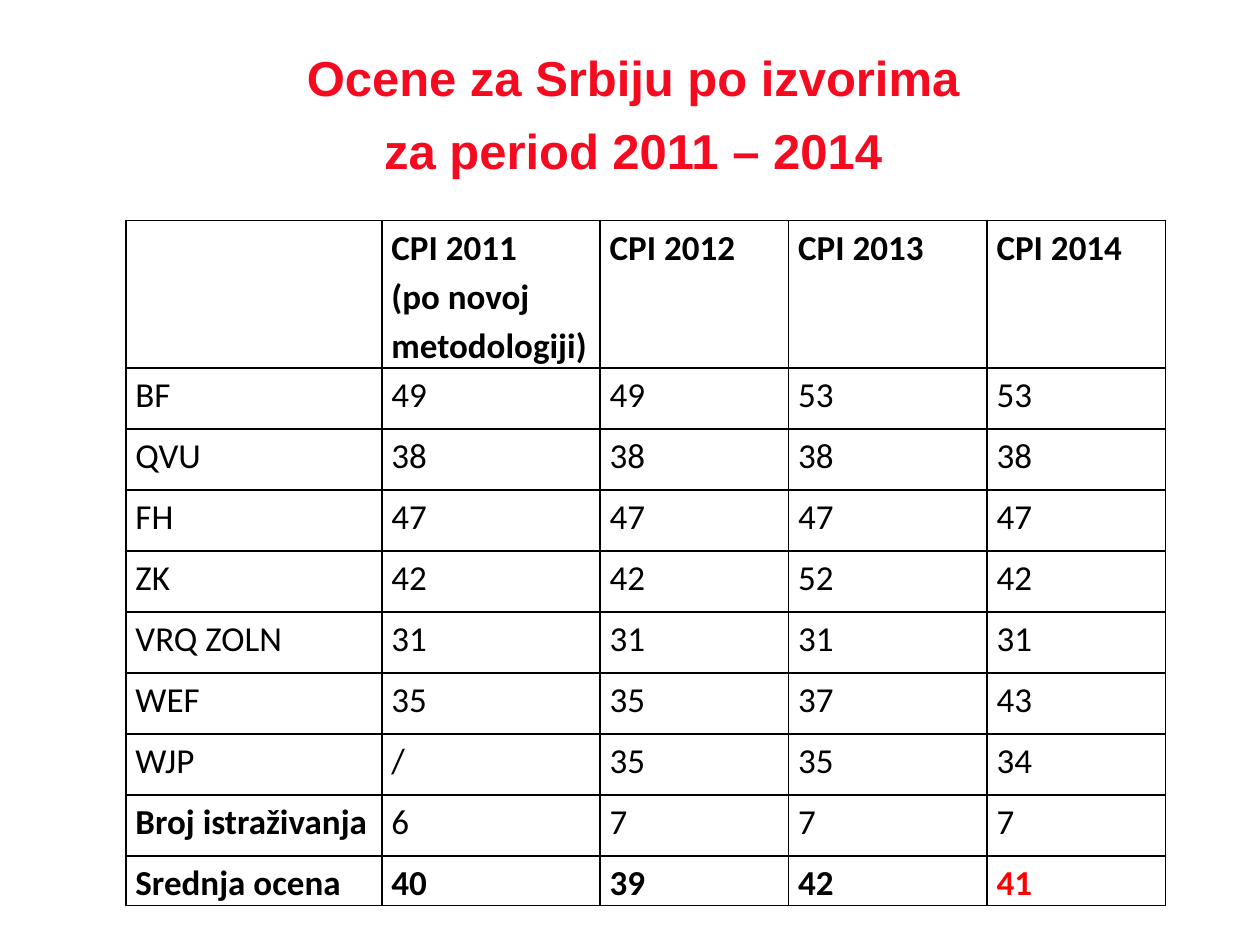
from dataclasses import dataclass

from lxml.etree import SubElement
from pptx import Presentation
from pptx.dml.color import RGBColor
from pptx.enum.text import MSO_ANCHOR as Anchor, MSO_AUTO_SIZE as AutoSize, PP_ALIGN as Align
from pptx.oxml.ns import qn
from pptx.util import Cm, Pt

COLORS = {"title": "F60A20", "text": "000000", "border": "000000", "highlight": "FF0000"}
TITLE_FONT = {"name": "Arial", "size": Pt(28), "bold": True}
CELL_FONT = {"name": "Calibri", "size": Pt(20)}
CELL_FORMAT = {"margin_left": Cm(0.19), "margin_right": Cm(0.19),
               "margin_top": 0, "margin_bottom": 0, "vertical_anchor": Anchor.TOP}
TABLE_FLAGS = {"first_row": False, "horz_banding": False}

COLUMN_WIDTHS = [5.16, 4.4, 3.8, 4.0, 3.6]
ROW_HEIGHT, LAST_ROW_HEIGHT = 1.23, 0.99


@dataclass
class ScoreRow:
    label: str
    scores: list[str]
    bold_label: bool = False
    bold_scores: bool = False


ROWS = [
    ScoreRow("", ["CPI 2011\n(po novoj metodologiji)", "CPI 2012", "CPI 2013", "CPI 2014"],
             bold_scores=True),
    ScoreRow("BF", ["49", "49", "53", "53"]),
    ScoreRow("QVU", ["38", "38", "38", "38"]),
    ScoreRow("FH", ["47", "47", "47", "47"]),
    ScoreRow("ZK", ["42", "42", "52", "42"]),
    ScoreRow("VRQ ZOLN", ["31", "31", "31", "31"]),
    ScoreRow("WEF", ["35", "35", "37", "43"]),
    ScoreRow("WJP", ["/", "35", "35", "34"]),
    ScoreRow("Broj istraživanja", ["6", "7", "7", "7"], bold_label=True),
    ScoreRow("Srednja ocena", ["40", "39", "42", "41"], bold_label=True, bold_scores=True),
]


def apply_format(target, values: dict) -> None:
    for attribute, value in values.items():
        setattr(target, attribute, value)


def add_borders(cell) -> None:
    properties = cell._tc.get_or_add_tcPr()
    for side in ("a:lnL", "a:lnR", "a:lnT", "a:lnB"):
        line = SubElement(properties, qn(side), w=str(Pt(1)))
        fill = SubElement(line, qn("a:solidFill"))
        SubElement(fill, qn("a:srgbClr"), val=COLORS["border"])


def fill_cell(cell, text: str, bold: bool, color: str = "text") -> None:
    apply_format(cell, CELL_FORMAT)
    add_borders(cell)
    cell.fill.background()
    cell.text = text
    for paragraph in cell.text_frame.paragraphs:
        paragraph.line_spacing = 1.15
        for run in paragraph.runs:
            apply_format(run.font, CELL_FONT | {"bold": bold})
            run.font.color.rgb = RGBColor.from_string(COLORS[color])


def add_title(slide, text: str) -> None:
    title = slide.shapes.title
    apply_format(title, {"left": Cm(2.1), "top": Cm(0.53),
                         "width": Cm(21.6), "height": Cm(2.8)})
    frame = title.text_frame
    frame.text = text
    apply_format(frame, {"vertical_anchor": Anchor.TOP, "word_wrap": True,
                         "auto_size": AutoSize.NONE})
    heading = frame.paragraphs[0]
    apply_format(heading, {"alignment": Align.CENTER, "line_spacing": Pt(42)})
    for run in heading.runs:
        apply_format(run.font, TITLE_FONT)
        run.font.color.rgb = RGBColor.from_string(COLORS["title"])


def add_scores(slide, rows: list[ScoreRow]) -> None:
    scores = slide.shapes.add_table(len(rows), len(COLUMN_WIDTHS), Cm(2.54), Cm(4.44),
                                    Cm(sum(COLUMN_WIDTHS)), Cm(13.74)).table
    apply_format(scores, TABLE_FLAGS)
    for column, width in zip(scores.columns, COLUMN_WIDTHS):
        column.width = Cm(width)
    for index, row in enumerate(rows):
        is_last = index == len(rows) - 1
        scores.rows[index].height = Cm(LAST_ROW_HEIGHT if is_last else ROW_HEIGHT)
        fill_cell(scores.cell(index, 0), row.label, row.bold_label)
        for number, score in enumerate(row.scores, start=1):
            # The latest average stands out
            newest_average = is_last and number == len(row.scores)
            fill_cell(scores.cell(index, number), score, row.bold_scores,
                      "highlight" if newest_average else "text")


def main() -> None:
    presentation = Presentation()
    apply_format(presentation, {"slide_width": Cm(25.4), "slide_height": Cm(19.05)})
    slide = presentation.slides.add_slide(presentation.slide_layouts[5])

    # Heading
    add_title(slide, "Ocene za Srbiju po izvorima \vza period 2011 – 2014 ")

    # Scores by source and year
    add_scores(slide, ROWS)

    presentation.save("out.pptx")


if __name__ == "__main__":
    main()
